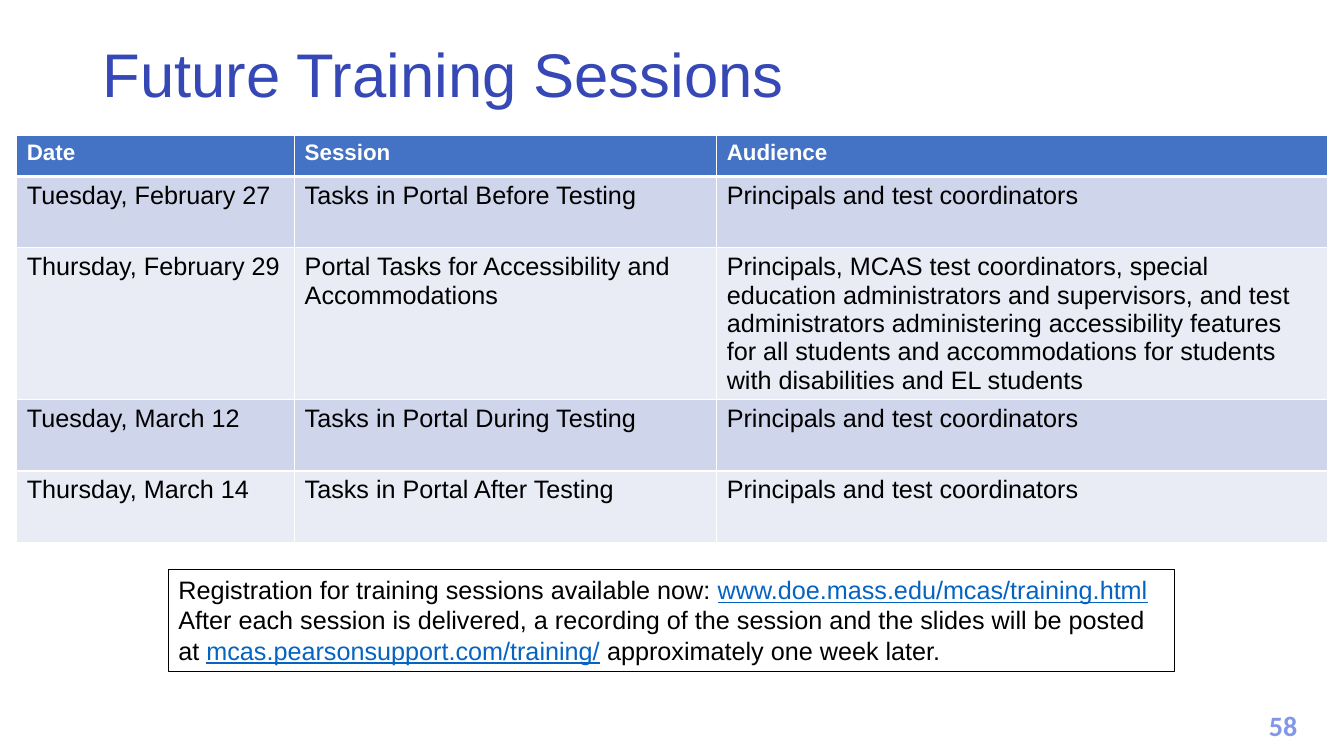
from lxml import etree
from pptx import Presentation
from pptx import util as u
from pptx.dml.color import RGBColor
from pptx.enum import shapes, text
from pptx.oxml import ns

BLACK = RGBColor(0x00, 0x00, 0x00)
WHITE = RGBColor(0xFF, 0xFF, 0xFF)
TITLE_BLUE = RGBColor(0x36, 0x47, 0xB6)
NUMBER_BLUE = RGBColor(0x83, 0x97, 0xE7)
LINK_BLUE = RGBColor(0x05, 0x63, 0xC1)
HEADER_BLUE = RGBColor(0x44, 0x72, 0xC4)
BAND_DARK = RGBColor(0xCF, 0xD5, 0xEA)
BAND_LIGHT = RGBColor(0xE9, 0xEB, 0xF5)

EVERYONE = "Principals and test coordinators"
SESSIONS = [
    ("Date", "Session", "Audience"),
    ("Tuesday, February 27", "Tasks in Portal Before Testing", EVERYONE),
    ("Thursday, February 29", "Portal Tasks for Accessibility and Accommodations",
     "Principals, MCAS test coordinators, special education administrators and "
     "supervisors, and test administrators administering accessibility features "
     "for all students and accommodations for students with disabilities and EL students"),
    ("Tuesday, March 12", "Tasks in Portal During Testing", EVERYONE),
    ("Thursday, March 14", "Tasks in Portal After Testing", EVERYONE),
]
REGISTRATION = [
    [("Registration for training sessions available now: ", False),
     ("www.doe.mass.edu/mcas/training.html", True)],
    [("After each session is delivered, a recording of the session and the slides "
      "will be posted at ", False),
     ("mcas.pearsonsupport.com/training/", True),
     (" approximately one week later.", False)],
]


class SlideWriter:
    font = "Arial"
    body_size = 18
    table_leading = 20.25

    def __init__(self, page):
        self.page = page

    def span(self, para, words, size=body_size, color=BLACK, bold=False,
             underline=False, font=font):
        span = para.add_run()
        span.text = words
        span.font.name = font
        span.font.size = u.Pt(size)
        span.font.bold = bold
        span.font.underline = underline
        span.font.color.rgb = color

    def title(self, words, left, top, width, height):
        box = self.page.shapes.title
        box.left, box.top, box.width, box.height = map(u.Pt, (left, top, width, height))
        frame = box.text_frame
        frame.auto_size = text.MSO_AUTO_SIZE.NONE
        frame.vertical_anchor = text.MSO_ANCHOR.MIDDLE
        para = frame.paragraphs[0]
        para.alignment = text.PP_ALIGN.LEFT
        para.line_spacing = 0.9
        self.span(para, words, size=44, color=TITLE_BLUE)

    def cell_borders(self, cell, bottom):
        properties = cell._tc.get_or_add_tcPr()
        for position, (side, width) in enumerate(
                (("lnL", 1), ("lnR", 1), ("lnT", 1), ("lnB", bottom))):
            line = etree.Element(ns.qn("a:" + side), w=str(u.Pt(width)))
            fill = etree.SubElement(line, ns.qn("a:solidFill"))
            etree.SubElement(fill, ns.qn("a:srgbClr"), val=str(WHITE))
            properties.insert(position, line)

    def table(self, rows, left, top, widths, header_height, row_height):
        height = header_height + row_height * (len(rows) - 1)
        table = self.page.shapes.add_table(
            len(rows), len(widths), u.Pt(left), u.Pt(top),
            u.Pt(sum(widths)), u.Pt(height)).table
        for column, width in zip(table.columns, widths):
            column.width = u.Pt(width)
        for index, row in enumerate(rows):
            header = index == 0
            table.rows[index].height = u.Pt(header_height if header else row_height)
            band = BAND_DARK if index % 2 else BAND_LIGHT
            for cell, words in zip(table.rows[index].cells, row):
                cell.fill.solid()
                cell.fill.fore_color.rgb = HEADER_BLUE if header else band
                self.cell_borders(cell, bottom=3 if header else 1)
                para = cell.text_frame.paragraphs[0]
                if not header:
                    para.line_spacing = u.Pt(self.table_leading)
                self.span(para, words, size=16 if header else self.body_size,
                          color=WHITE if header else BLACK, bold=header)

    def framed_note(self, lines, left, top, width, height):
        box = self.page.shapes.add_shape(
            shapes.MSO_SHAPE.RECTANGLE, *map(u.Pt, (left, top, width, height)))
        box.shadow.inherit = False
        box.fill.solid()
        box.fill.fore_color.rgb = WHITE
        box.line.color.rgb = BLACK
        box.line.width = u.Pt(0.75)
        frame = box.text_frame
        frame.word_wrap = True
        frame.vertical_anchor = text.MSO_ANCHOR.TOP
        for index, line in enumerate(lines):
            para = frame.add_paragraph() if index else frame.paragraphs[0]
            para.alignment = text.PP_ALIGN.LEFT
            for words, link in line:
                self.span(para, words, color=LINK_BLUE if link else BLACK, underline=link)

    def page_number(self, number, left, top, width, height):
        box = self.page.shapes.add_textbox(*map(u.Pt, (left, top, width, height)))
        box.text_frame.word_wrap = True
        para = box.text_frame.paragraphs[0]
        para.alignment = text.PP_ALIGN.CENTER
        self.span(para, number, size=20, color=NUMBER_BLUE, bold=True, font="Calibri")


def main():
    deck = Presentation()
    deck.slide_width, deck.slide_height = u.Pt(960), u.Pt(540)
    writer = SlideWriter(deck.slides.add_slide(deck.slide_layouts[5]))
    writer.page_number("58", 894.24, 502.5, 44.64, 31.7)
    writer.title("Future Training Sessions", 66, 14.4, 828, 82)
    writer.table(SESSIONS, 12, 96.8, (198.5, 301.5, 436.5), 29.2, 51)
    writer.framed_note(REGISTRATION, 120.4, 406.8, 718.8, 72.7)
    deck.save("out.pptx")


if __name__ == "__main__":
    main()
